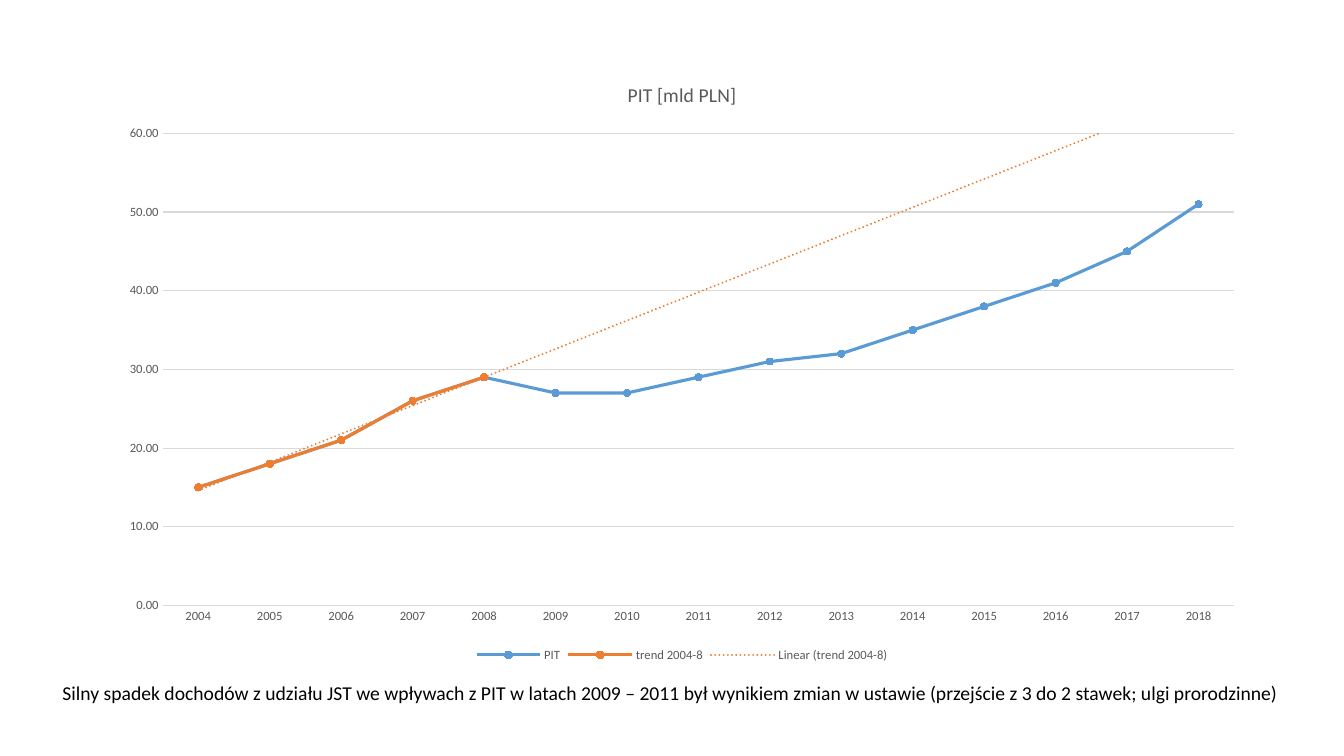
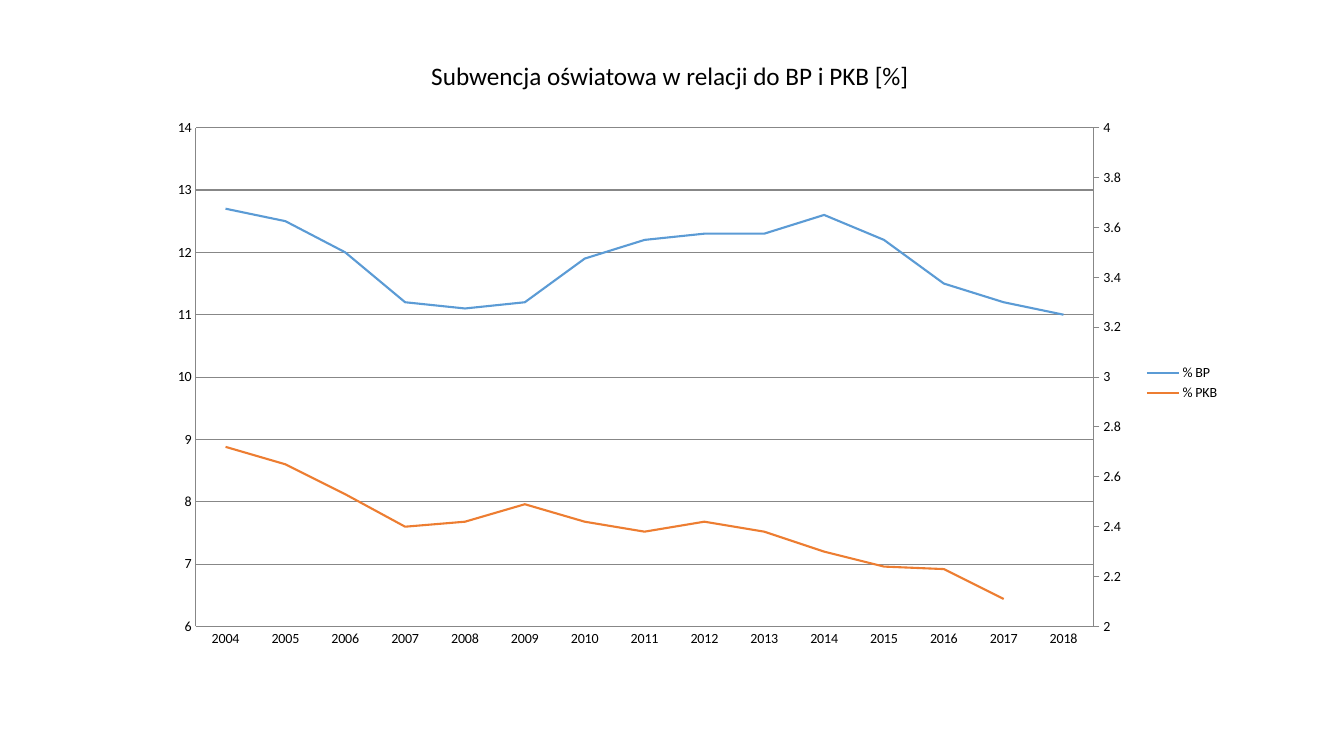
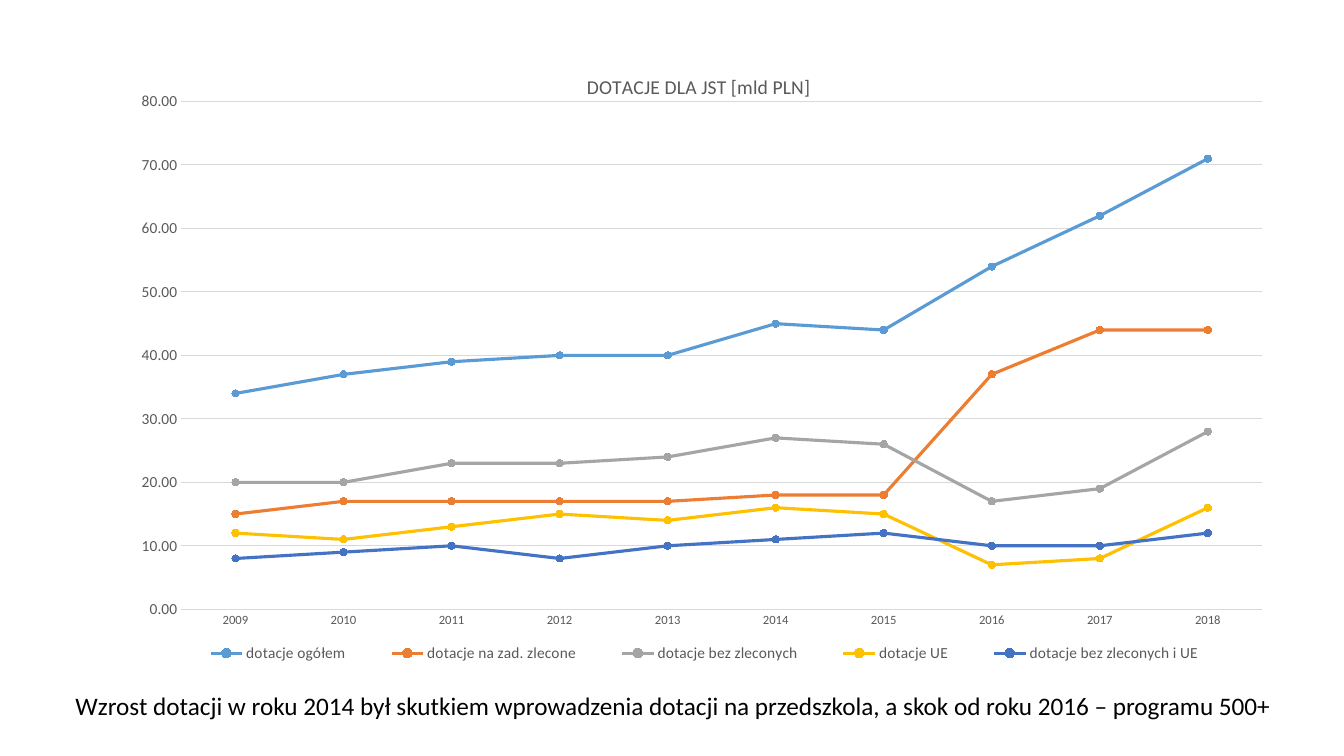
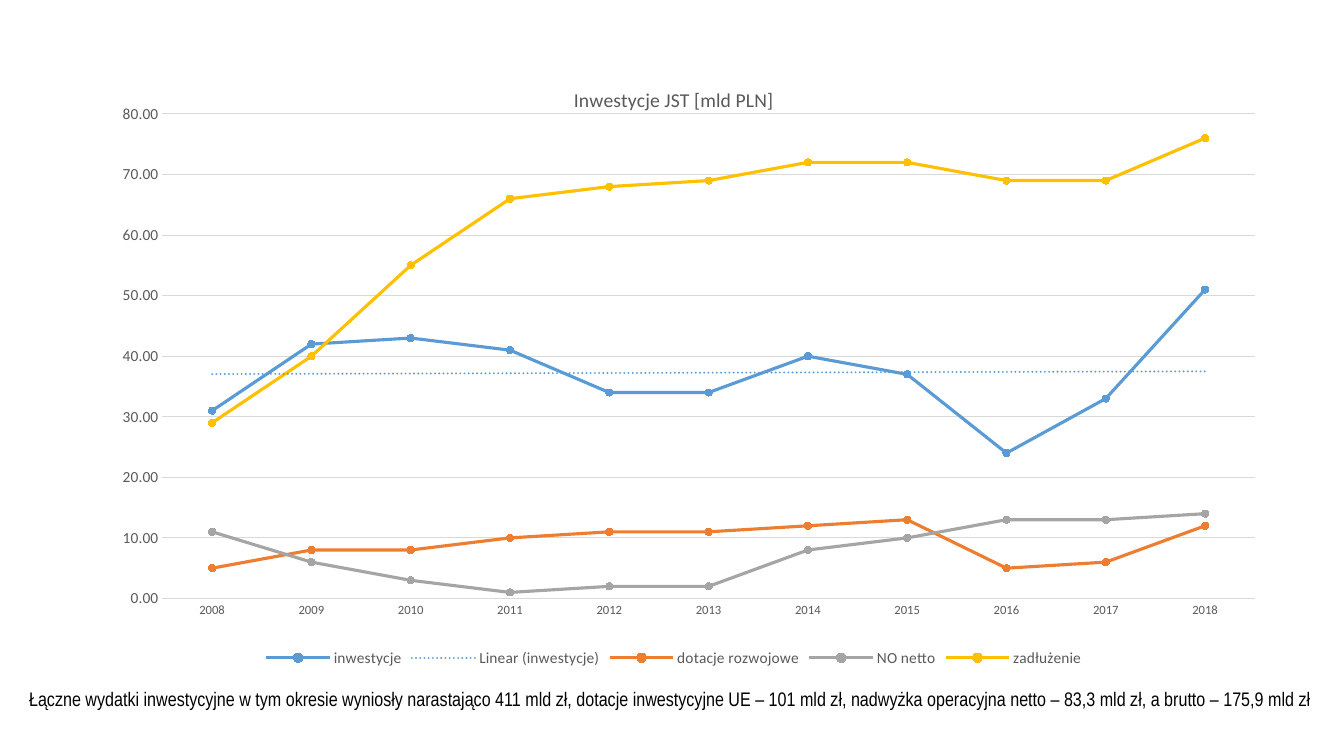
from copy import deepcopy

from pptx import Presentation
from pptx.chart.axis import CategoryAxis, ValueAxis
from pptx.chart.data import CategoryChartData
from pptx.dml.color import RGBColor
from pptx.enum.chart import XL_CHART_TYPE, XL_LEGEND_POSITION
from pptx.enum.chart import XL_MARKER_STYLE, XL_TICK_MARK
from pptx.enum.text import MSO_ANCHOR, MSO_AUTO_SIZE, PP_ALIGN
from pptx.oxml import parse_xml
from pptx.oxml.ns import nsdecls, qn
from pptx.util import Pt

PX = 9144  # one hundredth of an inch
COLORS = {
    "black": "000000", "text": "595959", "grid": "D9D9D9", "axis": "878787",
    "blue": "5B9BD5", "orange": "ED7D31", "gray": "A5A5A5",
    "gold": "FFC000", "navy": "4472C4",
}
CYCLE = ["blue", "orange", "gray", "gold", "navy"]
FONT = "Calibri"


def years(first):
    return [str(year) for year in range(first, 2019)]


class Deck:
    def __init__(self, width, height):
        self.show = Presentation()
        self.show.slide_width, self.show.slide_height = width * PX, height * PX
        self.slide = None

    def page(self, title=False):
        layout = self.show.slide_layouts[5 if title else 6]
        self.slide = self.show.slides.add_slide(layout)

    # Text
    def style(self, font, size, color="black", face=FONT):
        font.size, font.name, font.bold = Pt(size), face, False
        font.color.rgb = RGBColor.from_string(COLORS[color])

    def label(self, shape, text, size, face=FONT, wrap=True):
        frame = shape.text_frame
        frame.word_wrap = wrap
        frame.auto_size = MSO_AUTO_SIZE.SHAPE_TO_FIT_TEXT
        run = frame.paragraphs[0].add_run()
        run.text = text
        self.style(run.font, size, face=face)

    def title(self, box, text, size):
        shape = self.slide.shapes.title
        shape.left, shape.top, shape.width, shape.height = [n * PX for n in box]
        self.label(shape, text, size, wrap=False)
        shape.text_frame.vertical_anchor = MSO_ANCHOR.TOP
        shape.text_frame.paragraphs[0].alignment = PP_ALIGN.CENTER

    def note(self, box, text, size, face=FONT):
        shape = self.slide.shapes.add_textbox(*[n * PX for n in box])
        self.label(shape, text, size, face)

    # Charts
    def stroke(self, line, color, width):
        line.color.rgb = RGBColor.from_string(COLORS[color])
        line.width = Pt(width)

    def plot(self, kind, box, cats, rows):
        data = CategoryChartData()
        data.categories = cats
        for name, vals in rows:
            data.add_series(name, vals)
        frame = self.slide.shapes.add_chart(kind, *[n * PX for n in box], data)
        chart = frame.chart
        self.style(chart.font, 10)
        chart.has_title = False
        chart.has_legend = True
        chart.legend.include_in_layout = False
        return chart

    def scale(self, axis, low, high, step, color):
        axis.minimum_scale, axis.maximum_scale = low, high
        axis.major_unit = step
        axis.major_tick_mark = XL_TICK_MARK.NONE
        axis.has_major_gridlines = True
        self.stroke(axis.major_gridlines.format.line, color, 0.75)

    def base(self, axis, color):
        axis.major_tick_mark = XL_TICK_MARK.NONE
        self.stroke(axis.format.line, color, 0.75)

    def lines(self, box, title, cats, rows, high, size):
        """Titled line chart with markers and a legend below."""
        chart = self.plot(XL_CHART_TYPE.LINE_MARKERS, box, cats, rows)
        chart.has_title = True
        run = chart.chart_title.text_frame.paragraphs[0].add_run()
        run.text = title
        self.style(run.font, 14, "text")
        self.base(chart.category_axis, "grid")
        self.style(chart.category_axis.tick_labels.font, 9, "text")
        axis = chart.value_axis
        self.scale(axis, 0, high, 10, "grid")
        axis.format.line.fill.background()
        axis.tick_labels.number_format = "#,##0.00"
        axis.tick_labels.number_format_is_linked = False
        self.style(axis.tick_labels.font, size, "text")
        chart.legend.position = XL_LEGEND_POSITION.BOTTOM
        self.style(chart.legend.font, size, "text")
        for ser, color in zip(chart.plots[0].series, CYCLE):
            ser.smooth = False
            self.stroke(ser.format.line, color, 2.25)
            mark = ser.marker
            mark.style, mark.size = XL_MARKER_STYLE.CIRCLE, 5
            mark.format.fill.solid()
            mark.format.fill.fore_color.rgb = RGBColor.from_string(COLORS[color])
            self.stroke(mark.format.line, color, 0.75)
        return chart

    def trend(self, chart, index, ahead=0):
        ser = chart.plots[0].series[index]._element
        ahead = f'<c:forward val="{ahead}"/>' if ahead else ""
        ser.find(qn("c:cat")).addprevious(parse_xml(
            f'<c:trendline {nsdecls("c", "a")}><c:spPr>'
            f'<a:ln w="{Pt(1.5)}" cap="rnd"><a:solidFill>'
            f'<a:srgbClr val="{COLORS[CYCLE[index]]}"/></a:solidFill>'
            f'<a:prstDash val="sysDot"/></a:ln></c:spPr>'
            f'<c:trendlineType val="linear"/>{ahead}'
            f'<c:dispRSqr val="0"/><c:dispEq val="0"/></c:trendline>'))

    def place(self, part, at, x, y, w, h, inner=False):
        """Fix the place of a chart part, in shares of the chart."""
        old = part.find(qn("c:layout"))
        if old is not None:
            part.remove(old)
        target = '<c:layoutTarget val="inner"/>' if inner else ""
        sizes = "".join(f'<c:{key} val="{val}"/>'
                        for key, val in zip("xywh", (x, y, w, h)))
        part.insert(at, parse_xml(
            f'<c:layout {nsdecls("c")}><c:manualLayout>{target}'
            f'<c:xMode val="edge"/><c:yMode val="edge"/>{sizes}'
            f'</c:manualLayout></c:layout>'))

    def area(self, chart, *box):
        part = chart.element.find(qn("c:chart")).find(qn("c:plotArea"))
        self.place(part, 0, *box, inner=True)

    def split(self, chart, low, high, step):
        """Move the second series to an axis on the right."""
        area = chart.element.find(qn("c:chart")).find(qn("c:plotArea"))
        left = area.find(qn("c:lineChart"))
        right = deepcopy(left)
        left.remove(left.findall(qn("c:ser"))[1])
        right.remove(right.findall(qn("c:ser"))[0])
        left.addnext(right)
        cat, val = [area.find(qn(tag)) for tag in ("c:catAx", "c:valAx")]
        cat2, val2 = deepcopy(cat), deepcopy(val)
        val.addnext(val2)
        val2.addnext(cat2)
        for part, name, other in ((cat2, "501", "502"), (val2, "502", "501")):
            part.find(qn("c:axId")).set("val", name)
            part.find(qn("c:crossAx")).set("val", other)
        for ref, name in zip(right.findall(qn("c:axId")), ("501", "502")):
            ref.set("val", name)
        CategoryAxis(cat2).visible = False
        axis = ValueAxis(val2)
        self.scale(axis, low, high, step, "axis")
        axis.has_major_gridlines = False
        axis.major_tick_mark = XL_TICK_MARK.OUTSIDE
        val2.find(qn("c:axPos")).set("val", "r")
        val2.find(qn("c:crosses")).set("val", "max")


def tax(deck):
    deck.page()
    chart = deck.lines((106, 60, 1141, 601), "PIT [mld PLN]", years(2004), [
        ("PIT", [15, 18, 21, 26, 29, 27, 27, 29, 31, 32, 35, 38, 41, 45, 51]),
        ("trend 2004-8", [15, 18, 21, 26, 29] + [None] * 10),
    ], 60, 9)
    deck.trend(chart, 1, ahead=10)
    deck.note((52, 671, 1234, 34),
              "Silny spadek dochodów z udziału JST we wpływach z PIT w latach "
              "2009 – 2011 był wynikiem zmian w ustawie (przejście z 3 do 2 "
              "stawek; ulgi prorodzinne)", 14)


def school(deck):
    deck.page(title=True)
    deck.title((415, 55, 499, 40),
               "Subwencja oświatowa w relacji do BP i PKB [%]", 18)
    chart = deck.plot(
        XL_CHART_TYPE.LINE, (155, 108, 1065, 544), years(2004), [
            ("% BP", [12.7, 12.5, 12, 11.2, 11.1, 11.2, 11.9, 12.2, 12.3,
                      12.3, 12.6, 12.2, 11.5, 11.2, 11]),
            ("% PKB", [2.72, 2.65, 2.53, 2.4, 2.42, 2.49, 2.42, 2.38, 2.42,
                       2.38, 2.3, 2.24, 2.23, 2.11, None]),
        ])
    chart.legend.position = XL_LEGEND_POSITION.RIGHT
    deck.base(chart.category_axis, "axis")
    deck.scale(chart.value_axis, 6, 14, 1, "axis")
    deck.stroke(chart.value_axis.format.line, "axis", 0.75)
    for ser, color in zip(chart.plots[0].series, CYCLE):
        ser.smooth = False
        deck.stroke(ser.format.line, color, 1.5)
    deck.split(chart, 2, 4, 0.2)


def grants(deck):
    deck.page()
    chart = deck.lines(
        (123, 51, 1140, 622), "DOTACJE DLA JST [mld PLN]", years(2009), [
            ("dotacje ogółem", [34, 37, 39, 40, 40, 45, 44, 54, 62, 71]),
            ("dotacje na zad. zlecone",
             [15, 17, 17, 17, 17, 18, 18, 37, 44, 44]),
            ("dotacje bez zleconych",
             [20, 20, 23, 23, 24, 27, 26, 17, 19, 28]),
            ("dotacje UE", [12, 11, 13, 15, 14, 16, 15, 7, 8, 16]),
            ("dotacje bez zleconych i UE",
             [8, 9, 10, 8, 10, 11, 12, 10, 10, 12]),
        ], 80, 11)
    deck.area(chart, 0.05, 0.08, 0.94, 0.81)
    deck.place(chart.legend._element, 1, 0.04, 0.93, 0.93, 0.06)
    deck.note((65, 680, 1237, 40),
              "Wzrost dotacji w roku 2014 był skutkiem wprowadzenia dotacji "
              "na przedszkola, a skok od roku 2016 – programu 500+", 18)


def spending(deck):
    deck.page()
    chart = deck.lines(
        (92, 65, 1153, 601), "Inwestycje JST [mld PLN]", years(2008), [
            ("inwestycje", [31, 42, 43, 41, 34, 34, 40, 37, 24, 33, 51]),
            ("dotacje rozwojowe", [5, 8, 8, 10, 11, 11, 12, 13, 5, 6, 12]),
            ("NO netto", [11, 6, 3, 1, 2, 2, 8, 10, 13, 13, 14]),
            ("zadłużenie", [29, 40, 55, 66, 68, 69, 72, 72, 69, 69, 76]),
        ], 80, 11)
    deck.trend(chart, 0)
    deck.area(chart, 0.06, 0.08, 0.94, 0.8)
    deck.note((19, 677, 1298, 34),
              "Łączne wydatki inwestycyjne w tym okresie wyniosły narastająco "
              "411 mld zł, dotacje inwestycyjne UE – 101 mld zł, nadwyżka "
              "operacyjna netto – 83,3 mld zł, a brutto – 175,9 mld zł",
              14, "Arial Narrow")


def main():
    deck = Deck(1333, 750)
    for build in (tax, school, grants, spending):
        build(deck)
    deck.show.save("out.pptx")


if __name__ == "__main__":
    main()
